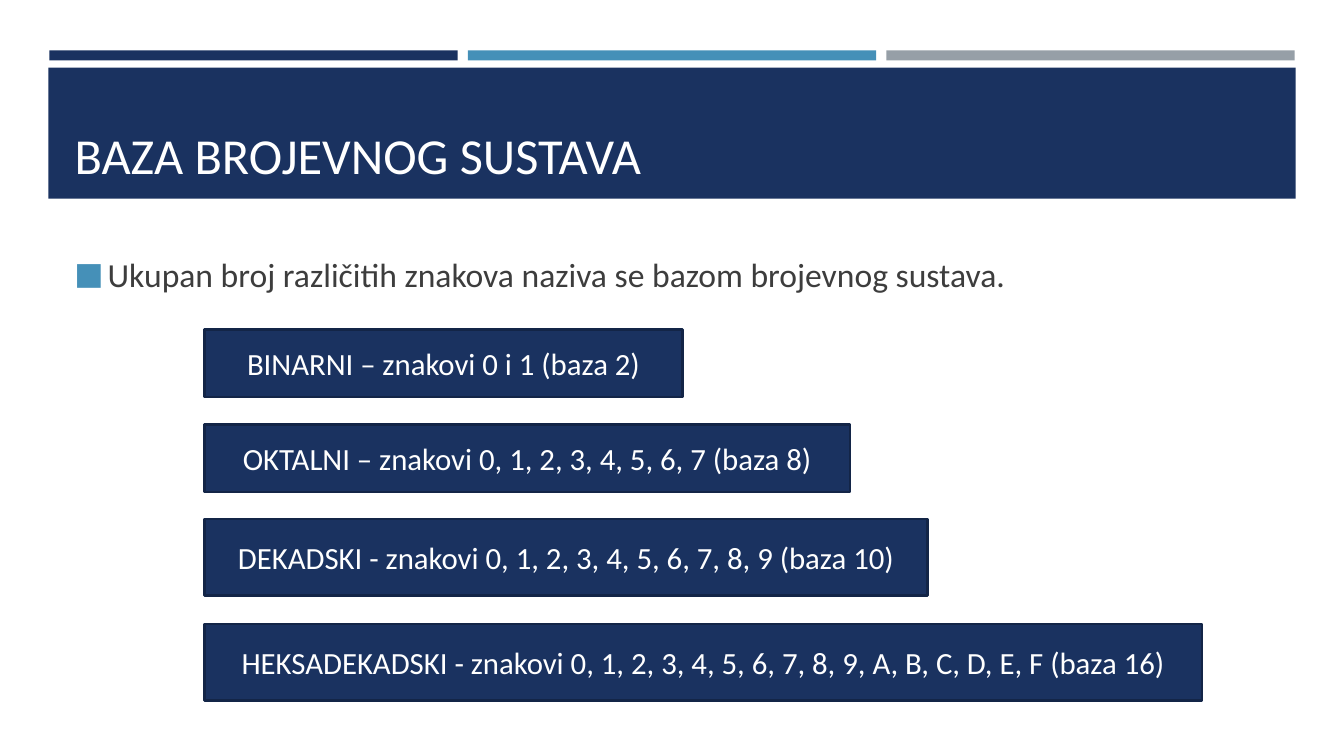
from dataclasses import dataclass

from lxml import etree
from pptx import Presentation
from pptx.dml.color import RGBColor
from pptx.enum import shapes, text
from pptx.oxml import ns
from pptx.util import Inches, Pt


@dataclass(frozen=True)
class Theme:
    font: str = "Calibri"
    navy: str = "1A3260"
    outline: str = "132547"
    blue: str = "4590B8"
    grey: str = "969FA7"
    body: str = "3D3D3D"
    white: str = "FFFFFF"
    title_size: int = 36
    body_size: int = 24
    box_size: int = 22


theme = Theme()


def add_box(slide, left, top, width, height, fill):
    shape = slide.shapes.add_shape(
        shapes.MSO_SHAPE.RECTANGLE,
        Inches(left), Inches(top), Inches(width), Inches(height))
    shape.shadow.inherit = False
    shape.fill.solid()
    shape.fill.fore_color.rgb = RGBColor.from_string(fill)
    shape.line.fill.background()
    return shape


def write(shape, wording, size, color, alignment, anchor):
    frame = shape.text_frame
    frame.text = wording
    frame.word_wrap = True
    frame.vertical_anchor = anchor
    paragraph = frame.paragraphs[0]
    paragraph.alignment = alignment
    font = paragraph.runs[0].font
    font.name = theme.font
    font.size = Pt(size)
    font.color.rgb = RGBColor.from_string(color)
    return paragraph


presentation = Presentation()
presentation.slide_width = Inches(13.33)
presentation.slide_height = Inches(7.5)
slide = presentation.slides.add_slide(presentation.slide_layouts[5])

# Header: three strips above the title band
for column, color in enumerate((theme.navy, theme.blue, theme.grey)):
    add_box(slide, 0.49 + column * 4.15, 0.5, 4.05, 0.1, color)
add_box(slide, 0.48, 0.67, 12.37, 1.3, theme.navy)

title = slide.shapes.title
title.left, title.top = Inches(0.64), Inches(0.77)
title.width, title.height = Inches(12.06), Inches(1.11)
write(title, "BAZA BROJEVNOG SUSTAVA", theme.title_size, theme.white,
      text.PP_ALIGN.LEFT, text.MSO_ANCHOR.BOTTOM)
slide.shapes.element.append(title.element)  # bring in front of the band

# Definition with a square bullet
definition = slide.shapes.add_textbox(
    Inches(0.64), Inches(2.42), Inches(12.06), Inches(0.6))
paragraph = write(
    definition, "Ukupan broj različitih znakova naziva se bazom brojevnog sustava.",
    theme.body_size, theme.body, text.PP_ALIGN.LEFT, text.MSO_ANCHOR.MIDDLE)
properties = paragraph.runs[0].font._element.getparent().getparent().get_or_add_pPr()
properties.set("marL", str(Inches(0.33)))
properties.set("indent", str(-Inches(0.33)))
bullet_color = etree.SubElement(properties, ns.qn("a:buClr"))
etree.SubElement(bullet_color, ns.qn("a:srgbClr"), val=theme.blue)
etree.SubElement(properties, ns.qn("a:buSzPct"), val="92000")
etree.SubElement(properties, ns.qn("a:buFont"), typeface=theme.font)
etree.SubElement(properties, ns.qn("a:buChar"), char="■")

# Number systems: top, width, height, wording
systems = (
    (3.27, 4.74, 0.67, "BINARNI – znakovi 0 i 1 (baza 2)"),
    (4.21, 6.4, 0.67, "OKTALNI – znakovi 0, 1, 2, 3, 4, 5, 6, 7 (baza 8)"),
    (5.15, 7.17, 0.76, "DEKADSKI - znakovi 0, 1, 2, 3, 4, 5, 6, 7, 8, 9 (baza 10)"),
    (6.19, 9.89, 0.76,
     "HEKSADEKADSKI - znakovi 0, 1, 2, 3, 4, 5, 6, 7, 8, 9, A, B, C, D, E, F (baza 16)"),
)
for top, width, height, wording in systems:
    box = add_box(slide, 2.03, top, width, height, theme.navy)
    box.line.color.rgb = RGBColor.from_string(theme.outline)
    box.line.width = Pt(1.75)
    write(box, wording, theme.box_size, theme.white,
          text.PP_ALIGN.CENTER, text.MSO_ANCHOR.MIDDLE)

presentation.save("out.pptx")
